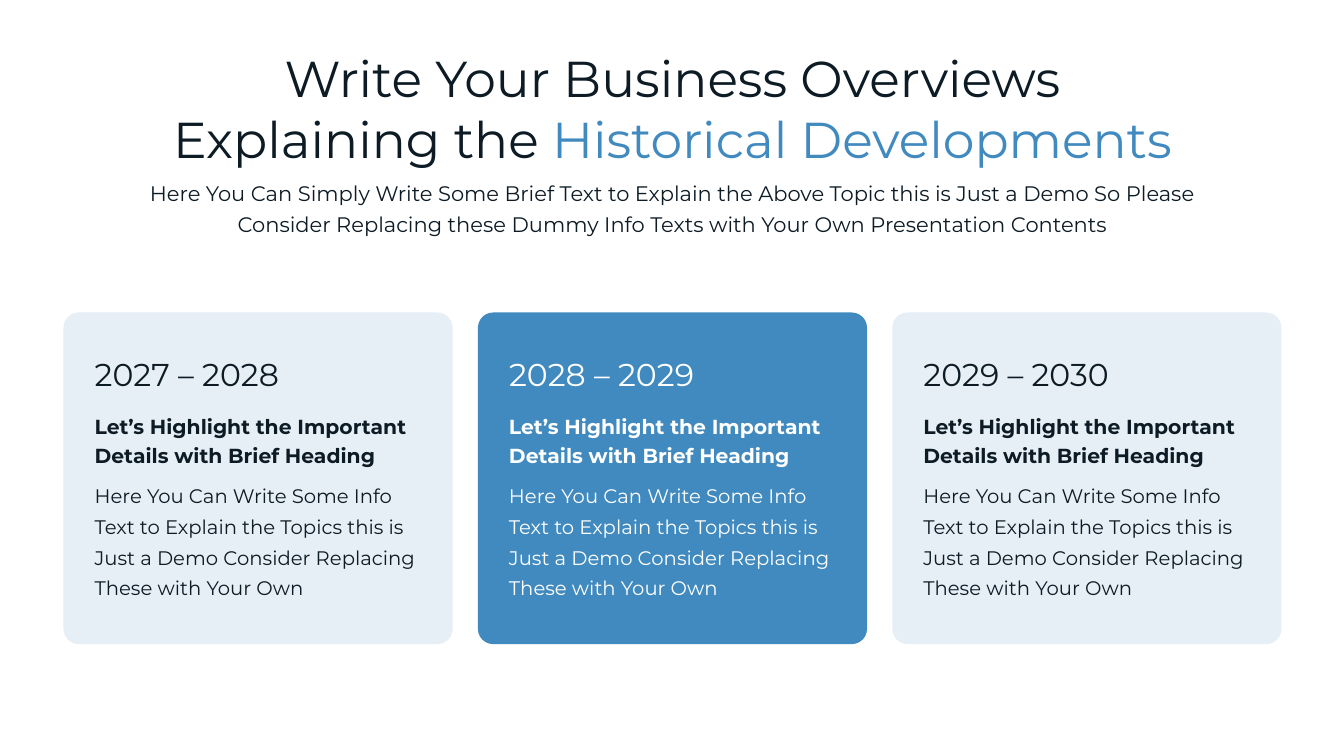
import dataclasses

import pptx
import pptx.dml.color
import pptx.enum.shapes
import pptx.enum.text
import pptx.util

Inches = pptx.util.Inches
Pt = pptx.util.Pt
Align = pptx.enum.text.PP_ALIGN


@dataclasses.dataclass(frozen=True)
class Theme:
    font: str = "Montserrat"
    ink: str = "0D1B25"
    accent: str = "418ABF"
    pale: str = "E6EEF6"
    white: str = "FFFFFF"
    title: float = 36
    intro: float = 15
    years: float = 22.5
    heading: float = 14.5
    body: float = 14
    heading_leading: float = 21
    body_leading: float = 22


THEME = Theme()

TITLE = ["Write Your Business Overviews", "Explaining the "]
TITLE_ACCENT = "Historical Developments"
INTRO = [
    "Here You Can Simply Write Some Brief Text to Explain the Above Topic this is Just a Demo So Please",
    "Consider Replacing these Dummy Info Texts with Your Own Presentation Contents",
]
HEADING = ["Let’s Highlight the Important\vDetails with Brief Heading"]
BODY = [
    "Here You Can Write Some Info",
    "Text to Explain the Topics this is",
    "Just a Demo Consider Replacing",
    "These with Your Own",
]
CARDS = [
    ("2027 – 2028", THEME.pale, THEME.ink),
    ("2028 – 2029", THEME.accent, THEME.white),
    ("2029 – 2030", THEME.pale, THEME.ink),
]


def rgb(color):
    return pptx.dml.color.RGBColor.from_string(color)


def style_span(span, size, color, bold=False):
    span.font.name = THEME.font
    span.font.size = Pt(size)
    span.font.bold = bold
    span.font.color.rgb = rgb(color)


def add_text(page, box, lines, size, color, leading=None, bold=False, align=Align.LEFT):
    frame = page.shapes.add_textbox(*map(Inches, box)).text_frame
    frame.word_wrap = False
    frame.auto_size = pptx.enum.text.MSO_AUTO_SIZE.SHAPE_TO_FIT_TEXT
    for index, line in enumerate(lines):
        para = frame.add_paragraph() if index else frame.paragraphs[0]
        para.text = line
        para.alignment = align
        if leading:
            para.line_spacing = Pt(leading)
        for span in para.runs:
            style_span(span, size, color, bold)
    return frame


def add_header(page, box):
    left, top, width, height = box
    title = add_text(page, (left, top, width, 1.31), TITLE,
                     THEME.title, THEME.ink, align=Align.CENTER)
    span = title.paragraphs[-1].add_run()
    span.text = TITLE_ACCENT
    style_span(span, THEME.title, THEME.accent)
    add_text(page, (left, top + 1.27, width, height - 1.27), INTRO,
             THEME.intro, THEME.ink, THEME.body_leading, align=Align.CENTER)


def add_card(page, box, years, fill, color):
    left, top, width, height = box
    panel = page.shapes.add_shape(
        pptx.enum.shapes.MSO_SHAPE.ROUNDED_RECTANGLE, *map(Inches, box))
    panel.adjustments[0] = 0.046
    panel.shadow.inherit = False
    panel.fill.solid()
    panel.fill.fore_color.rgb = rgb(fill)
    panel.line.fill.background()

    text_left, text_width = left + 0.21, width - 0.43
    add_text(page, (text_left, top + 0.37, 2.15, 0.48), [years],
             THEME.years, color)
    add_text(page, (text_left, top + 0.91, text_width, 0.67), HEADING,
             THEME.heading, color, THEME.heading_leading, bold=True)
    add_text(page, (text_left, top + 1.58, text_width, 1.31), BODY,
             THEME.body, color, THEME.body_leading)


def add_cards(page, box, gap):
    left, top, width, height = box
    card_width = (width - gap * (len(CARDS) - 1)) / len(CARDS)
    for index, card in enumerate(CARDS):
        card_left = left + index * (card_width + gap)
        add_card(page, (card_left, top, card_width, height), *card)


def main():
    deck = pptx.Presentation()
    deck.slide_width = Inches(13.33)
    deck.slide_height = Inches(7.5)
    page = deck.slides.add_slide(deck.slide_layouts[6])
    page.background.fill.solid()
    page.background.fill.fore_color.rgb = rgb(THEME.white)
    add_header(page, (1.11, 0.42, 11.12, 1.96))
    add_cards(page, (0.63, 3.1, 12.08, 3.29), 0.25)
    deck.save("out.pptx")


if __name__ == "__main__":
    main()
